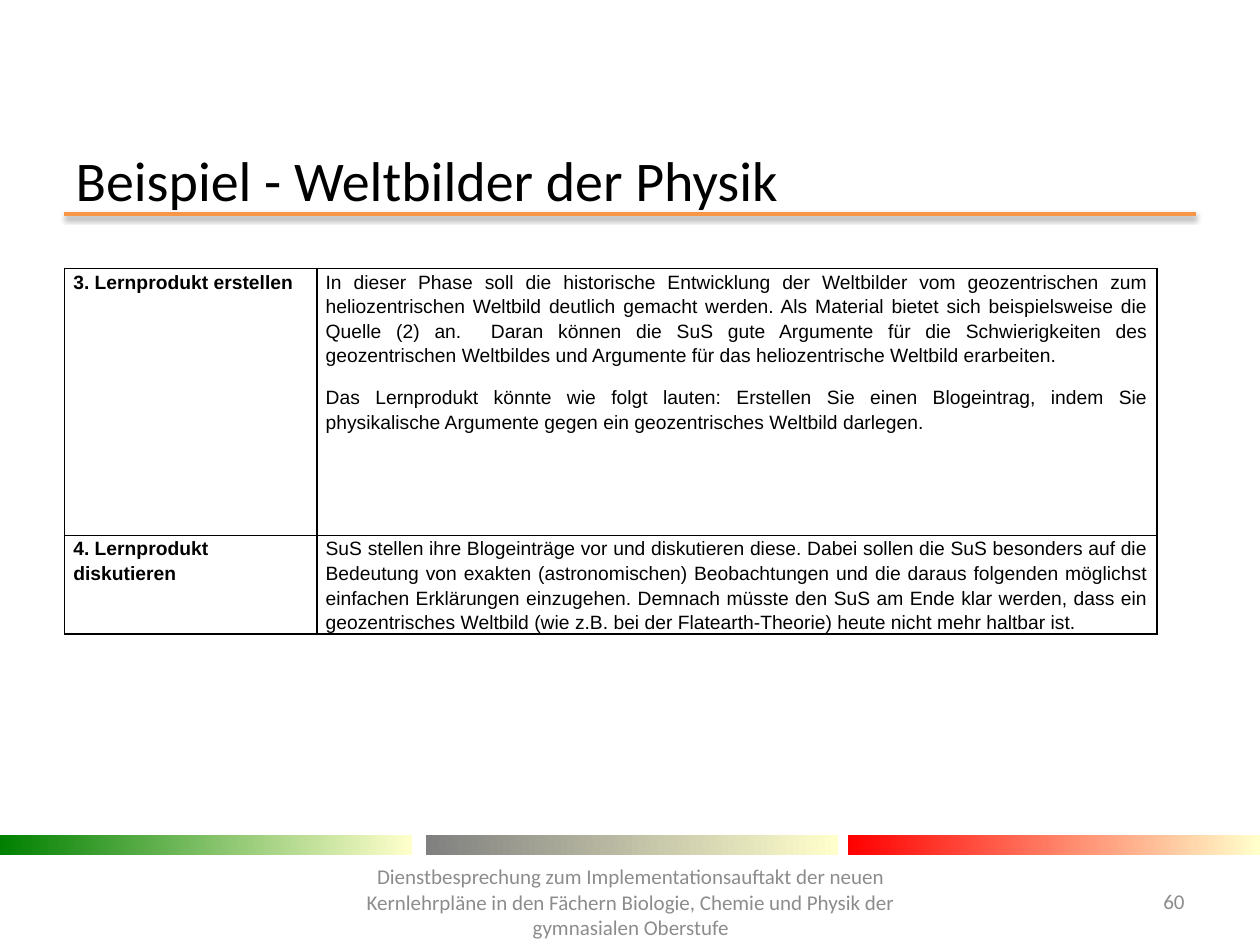
from lxml import etree
from pptx import Presentation
from pptx.dml.color import RGBColor
from pptx.enum.shapes import MSO_CONNECTOR, MSO_SHAPE
from pptx.enum.text import MSO_ANCHOR as ANCHOR, MSO_AUTO_SIZE, PP_ALIGN as ALIGN
from pptx.oxml import parse_xml
from pptx.oxml.ns import nsdecls, qn
from pptx.util import Pt

COLORS = {
    "black": "000000", "white": "FFFFFF", "orange": "F79646", "footer": "8C8C8C",
    "green": "008000", "gray": "808080", "red": "FF0000", "cream": "FFFFCC",
}
BARS = [(0, "green"), (243.4, "gray"), (484.6, "red")]
COLUMN_WIDTHS = [144.2, 480]
ROW_HEIGHTS = [152.5, 56.5]
PHASES = [
    ("3. Lernprodukt erstellen", [
        "In dieser Phase soll die historische Entwicklung der Weltbilder vom geozentrischen "
        "zum heliozentrischen Weltbild deutlich gemacht werden. Als Material bietet sich "
        "beispielsweise die Quelle (2) an.  Daran können die SuS gute Argumente für die "
        "Schwierigkeiten des geozentrischen Weltbildes und Argumente für das "
        "heliozentrische Weltbild erarbeiten.",
        "Das Lernprodukt könnte wie folgt lauten: Erstellen Sie einen Blogeintrag, indem Sie "
        "physikalische Argumente gegen ein geozentrisches Weltbild darlegen.",
    ]),
    ("4. Lernprodukt\vdiskutieren", [
        "SuS stellen ihre Blogeinträge vor und diskutieren diese. Dabei sollen die SuS "
        "besonders auf die Bedeutung von exakten (astronomischen) Beobachtungen und die "
        "daraus folgenden möglichst einfachen Erklärungen einzugehen. Demnach müsste den SuS "
        "am Ende klar werden, dass ein geozentrisches Weltbild (wie z.B. bei der "
        "Flatearth-Theorie) heute nicht mehr haltbar ist.",
    ]),
]
FOOTER = ("Dienstbesprechung zum Implementationsauftakt der neuen Kernlehrpläne in den "
          "Fächern Biologie, Chemie und Physik der gymnasialen Oberstufe")


def rgb(name):
    return RGBColor.from_string(COLORS[name])


def write_text(frame, texts, size=12, font="Calibri", color="black", bold=False,
               align=ALIGN.LEFT, line_spacing=None, gap=0):
    """Write one paragraph per text, with a gap in points between them."""
    for index, text in enumerate(texts):
        paragraph = frame.add_paragraph() if index else frame.paragraphs[0]
        paragraph.text = text
        paragraph.alignment = align
        paragraph.line_spacing = line_spacing
        if index < len(texts) - 1:
            paragraph.space_after = Pt(gap)
        for run in paragraph.runs:
            run.font.size, run.font.name, run.font.bold = Pt(size), font, bold
            run.font.color.rgb = rgb(color)


def add_title(slide, text):
    title = slide.shapes.title
    title.left, title.top, title.width, title.height = Pt(36), Pt(88.5), Pt(648), Pt(28)
    frame = title.text_frame
    frame.auto_size = MSO_AUTO_SIZE.NONE
    frame.vertical_anchor = ANCHOR.MIDDLE
    write_text(frame, [text], size=32)


def add_label(slide, text, left, top, width, height, **text_format):
    frame = slide.shapes.add_textbox(Pt(left), Pt(top), Pt(width), Pt(height)).text_frame
    frame.word_wrap = True
    frame.vertical_anchor = ANCHOR.MIDDLE
    write_text(frame, [text], **text_format)


def add_title_rule(slide):
    y = Pt(122.4)
    rule = slide.shapes.add_connector(MSO_CONNECTOR.STRAIGHT, Pt(36.7), y, Pt(683.3), y)
    rule.line.color.rgb = rgb("orange")
    rule.line.width = Pt(2)
    rule._element.spPr.append(parse_xml(
        f'<a:effectLst {nsdecls("a")}><a:outerShdw blurRad="{Pt(3.1)}" dist="{Pt(1.6)}" '
        f'dir="5400000" rotWithShape="0"><a:srgbClr val="{COLORS["black"]}">'
        '<a:alpha val="38000"/></a:srgbClr></a:outerShdw></a:effectLst>'))


def add_gradient_bar(slide, left, color):
    bar = slide.shapes.add_shape(MSO_SHAPE.RECTANGLE, Pt(left), Pt(477.2), Pt(235.4), Pt(11.5))
    bar.shadow.inherit = False
    bar.line.fill.background()
    bar.fill.gradient()
    bar.fill.gradient_angle = 0
    for stop, position, name in zip(bar.fill.gradient_stops, (0, 1), (color, "cream")):
        stop.position = position
        stop.color.rgb = rgb(name)


def format_cell(cell):
    cell.margin_left = cell.margin_right = Pt(5)
    cell.margin_top = cell.margin_bottom = Pt(0)
    cell.fill.solid()
    cell.fill.fore_color.rgb = rgb("white")
    properties = cell._tc.get_or_add_tcPr()
    # Borders come before the fill
    for index, side in enumerate(("lnL", "lnR", "lnT", "lnB")):
        border = etree.Element(qn(f"a:{side}"), w=str(Pt(1)))
        fill = etree.SubElement(border, qn("a:solidFill"))
        etree.SubElement(fill, qn("a:srgbClr"), val=COLORS["black"])
        properties.insert(index, border)


def add_phase_table(slide):
    table = slide.shapes.add_table(
        len(PHASES), 2, Pt(36.9), Pt(153.4),
        Pt(sum(COLUMN_WIDTHS)), Pt(sum(ROW_HEIGHTS))).table
    for column, width in zip(table.columns, COLUMN_WIDTHS):
        column.width = Pt(width)
    for row, height, (phase, description) in zip(table.rows, ROW_HEIGHTS, PHASES):
        row.height = Pt(height)
        name_cell, description_cell = row.cells
        for cell in (name_cell, description_cell):
            format_cell(cell)
        body = dict(size=11, font="Arial", line_spacing=1.15)
        write_text(name_cell.text_frame, [phase], bold=True, **body)
        write_text(description_cell.text_frame, description,
                   align=ALIGN.JUSTIFY, gap=10, **body)


def main():
    presentation = Presentation()
    presentation.slide_width, presentation.slide_height = Pt(720), Pt(540)
    slide = presentation.slides.add_slide(presentation.slide_layouts[5])

    # Title and rule
    add_title_rule(slide)
    add_title(slide, "Beispiel - Weltbilder der Physik")

    # Lesson phases
    add_phase_table(slide)

    # Footer
    for left, color in BARS:
        add_gradient_bar(slide, left, color)
    add_label(slide, FOOTER, 193, 494.8, 334.8, 41, color="footer", align=ALIGN.CENTER)
    add_label(slide, "60", 638, 500.5, 46, 28.8, color="footer", align=ALIGN.RIGHT)

    presentation.save("out.pptx")


if __name__ == "__main__":
    main()
